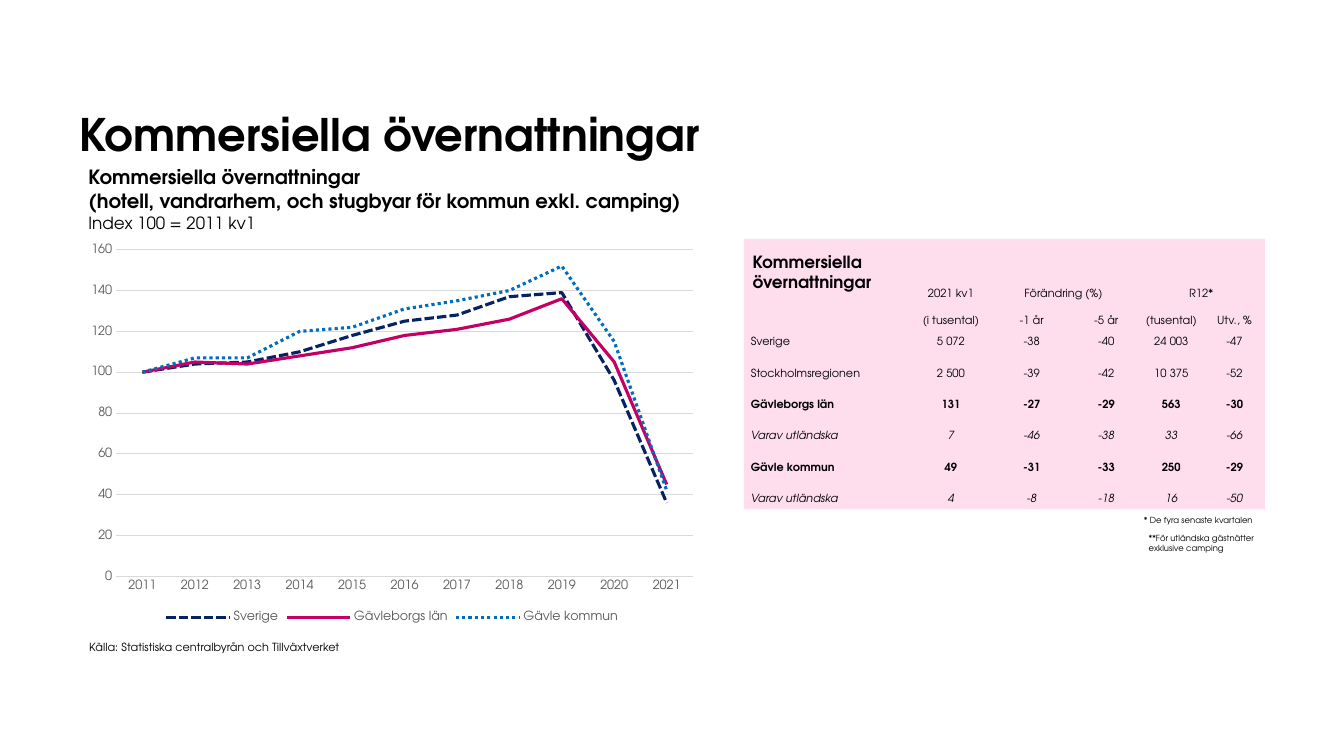
from dataclasses import dataclass
from typing import Optional

from lxml.etree import SubElement
from pptx import Presentation
from pptx.chart.data import CategoryChartData
from pptx.dml.color import RGBColor
from pptx.enum.chart import XL_CHART_TYPE as ChartType, XL_LEGEND_POSITION as LegendPos
from pptx.enum.chart import XL_MARKER_STYLE as Marker, XL_TICK_MARK as Tick
from pptx.enum.dml import MSO_LINE as Dash
from pptx.enum.shapes import MSO_SHAPE as Shape
from pptx.enum.text import MSO_ANCHOR as Anchor, PP_ALIGN as Align
from pptx.oxml.ns import qn
from pptx.util import Cm, Pt

FONT = "TeX Gyre Adventor"
BLACK, GREY, GRID, PINK = "000000", "595959", "D9D9D9", "FEDEED"
NO_GRID_STYLE = "{2D5ABB26-0587-4C30-8999-92F81FD0307C}"


@dataclass
class Line:
    text: str
    size: float
    bold: bool = False


@dataclass
class Caption:
    left: float
    top: float
    width: float
    height: float
    lines: list[Line]
    inset: bool = True
    wrap: bool = True
    anchor: Anchor = Anchor.TOP


@dataclass
class Region:
    name: str
    index: list[int]
    color: str
    dash: Optional[Dash] = None


@dataclass
class StayRow:
    label: str
    values: list[str]
    bold: bool = False
    italic: bool = False


CAPTIONS = [
    Caption(2, 0.94, 23.42, 3.1, [Line("Kommersiella övernattningar", 32, True)],
            inset=False, anchor=Anchor.BOTTOM),
    Caption(2, 16, 7.04, 0.6, [Line("Källa: Statistiska centralbyrån och Tillväxtverket", 8)]),
    Caption(18.72, 6.22, 6.1, 0.76, [Line("Kommersiella övernattningar", 12, True)]),
    Caption(28.58, 12.85, 3.28, 0.5, [Line("* De fyra senaste kvartalen", 6)], wrap=False),
    Caption(1.98, 4.04, 15.8, 1.96, [
        Line("Kommersiella övernattningar", 14, True),
        Line("(hotell, vandrarhem, och stugbyar för kommun exkl. camping)", 14, True),
        Line("Index 100 = 2011 kv1", 12)]),
    Caption(28.7, 13.31, 3.15, 0.76,
            [Line("**För utländska gästnätter exklusive camping", 6)]),
]

REGIONS = [
    Region("Sverige", [100, 104, 105, 110, 118, 125, 128, 137, 139, 96, 36],
           "052364", Dash.SQUARE_DOT),
    Region("Gävleborgs län", [100, 105, 104, 108, 112, 118, 121, 126, 136, 105, 45], "C40064"),
    Region("Gävle kommun", [100, 107, 107, 120, 122, 131, 135, 140, 152, 115, 42],
           "006EBF", Dash.ROUND_DOT),
]

HEADERS = [
    StayRow("", ["2021 kv1", "Förändring (%)", "", "R12*", ""]),
    StayRow("", ["(i tusental)", "-1 år", "-5 år", "(tusental)", "Utv., %"]),
]
STAYS = [
    StayRow("Sverige", ["5 072", "-38", "-40", "24 003", "-47"]),
    StayRow("Stockholmsregionen", ["2 500", "-39", "-42", "10 375", "-52"]),
    StayRow("Gävleborgs län", ["131", "-27", "-29", "563", "-30"], bold=True),
    StayRow("Varav utländska", ["7", "-46", "-38", "33", "-66"], italic=True),
    StayRow("Gävle kommun", ["49", "-31", "-33", "250", "-29"], bold=True),
    StayRow("Varav utländska", ["4", "-8", "-18", "16", "-50"], italic=True),
]
COLUMN_WIDTHS = [4.29, 1.91, 2.16, 1.6, 1.68, 1.5]
ROW_HEIGHTS = [0.66, 0.69] + [0.79] * len(STAYS)


def rgb(color: str) -> RGBColor:
    return RGBColor.from_string(color)


def style_font(font, size: float, color: str = BLACK, bold: bool = False,
               italic: bool = False) -> None:
    font.name, font.size = FONT, Pt(size)
    font.bold, font.italic = bold, italic
    font.color.rgb = rgb(color)


def write(paragraph, text: str, *, size: float, bold: bool = False,
          italic: bool = False, align: Align = Align.LEFT) -> None:
    paragraph.alignment = align
    if text:
        run = paragraph.add_run()
        run.text = text
        style_font(run.font, size, bold=bold, italic=italic)
    else:
        SubElement(paragraph._p, qn("a:endParaRPr")).set("sz", str(int(size * 100)))


def draw_caption(slide, caption: Caption) -> None:
    box = slide.shapes.add_textbox(Cm(caption.left), Cm(caption.top),
                                   Cm(caption.width), Cm(caption.height))
    frame = box.text_frame
    frame.word_wrap, frame.vertical_anchor = caption.wrap, caption.anchor
    if not caption.inset:
        frame.margin_left = frame.margin_right = frame.margin_top = frame.margin_bottom = 0
    for number, line in enumerate(caption.lines):
        paragraph = frame.add_paragraph() if number else frame.paragraphs[0]
        write(paragraph, line.text, size=line.size, bold=line.bold)


def draw_panel(slide) -> None:
    panel = slide.shapes.add_shape(Shape.RECTANGLE, Cm(18.75), Cm(6.02), Cm(13.13), Cm(6.81))
    panel.shadow.inherit = False
    panel.fill.solid()
    panel.fill.fore_color.rgb = rgb(PINK)
    panel.line.fill.background()


def draw_stays(slide) -> None:
    rows = HEADERS + STAYS
    frame = slide.shapes.add_table(len(rows), len(COLUMN_WIDTHS), Cm(18.72), Cm(6.88),
                                   Cm(sum(COLUMN_WIDTHS)), Cm(sum(ROW_HEIGHTS)))
    table = frame.table
    table.first_row = table.horz_banding = False
    table._tbl.tblPr.find(qn("a:tableStyleId")).text = NO_GRID_STYLE
    for column, width in zip(table.columns, COLUMN_WIDTHS):
        column.width = Cm(width)
    for r, (row, height) in enumerate(zip(rows, ROW_HEIGHTS)):
        table.rows[r].height = Cm(height)
        for c, text in enumerate([row.label] + row.values):
            cell = table.cell(r, c)
            cell.fill.background()
            cell.margin_left = Cm(0.02 if c else 0.2)
            cell.margin_right = cell.margin_top = Cm(0.02)
            cell.margin_bottom = 0
            cell.vertical_anchor = Anchor.BOTTOM if r < len(HEADERS) else Anchor.MIDDLE
            write(cell.text_frame.paragraphs[0], text, size=8, bold=row.bold,
                  italic=row.italic, align=Align.CENTER if c else Align.LEFT)
    for first in (2, 4):
        table.cell(0, first).merge(table.cell(0, first + 1))


def draw_index(slide) -> None:
    data = CategoryChartData()
    data.categories = [str(year) for year in range(2011, 2022)]
    for region in REGIONS:
        data.add_series(region.name, region.index)
    chart = slide.shapes.add_chart(ChartType.LINE, Cm(1.98), Cm(6), Cm(15.8), Cm(9.8), data).chart
    chart.has_title = False
    style_font(chart.font, 10)
    chart.has_legend = True
    chart.legend.position = LegendPos.BOTTOM
    chart.legend.include_in_layout = False
    style_font(chart.legend.font, 9, GREY)

    # Axes
    years, values = chart.category_axis, chart.value_axis
    for axis in (years, values):
        axis.major_tick_mark = axis.minor_tick_mark = Tick.NONE
        style_font(axis.tick_labels.font, 9, GREY)
    values.minimum_scale, values.maximum_scale, values.major_unit = 0, 160, 20
    values.format.line.fill.background()
    for line in (years.format.line, values.major_gridlines.format.line):
        line.color.rgb, line.width = rgb(GRID), Pt(0.75)

    # Series
    plot = chart.plots[0]
    plot.vary_by_categories = False
    for series, region in zip(plot.series, REGIONS):
        series.smooth = False
        series.marker.style = Marker.NONE
        line = series.format.line
        line.color.rgb, line.width = rgb(region.color), Pt(2.25)
        if region.dash:
            line.dash_style = region.dash

    # Plot area position
    area = chart._chartSpace.chart.plotArea
    layout = area.find(qn("c:layout"))
    if layout is None:
        layout = SubElement(area, qn("c:layout"))
        area.insert(0, layout)
    manual = SubElement(layout, qn("c:manualLayout"))
    for tag, value in [("layoutTarget", "inner"), ("xMode", "edge"), ("yMode", "edge"),
                       ("x", "0.06"), ("y", "0.03"), ("w", "0.92"), ("h", "0.84")]:
        SubElement(manual, qn(f"c:{tag}")).set("val", value)


def main() -> None:
    deck = Presentation()
    deck.slide_width, deck.slide_height = Cm(33.87), Cm(19.05)
    slide = deck.slides.add_slide(deck.slide_layouts[6])
    draw_panel(slide)
    draw_stays(slide)
    draw_index(slide)
    for caption in CAPTIONS:
        draw_caption(slide, caption)
    deck.save("out.pptx")


if __name__ == "__main__":
    main()
